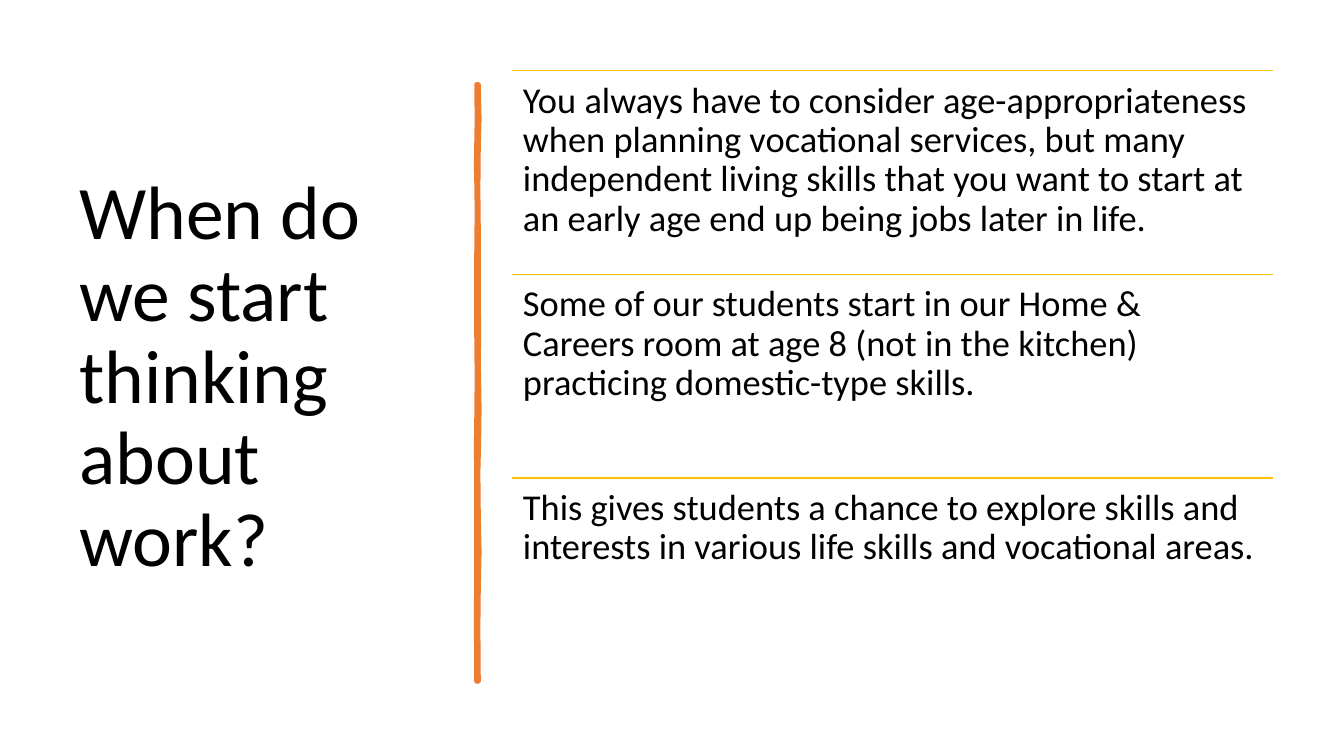
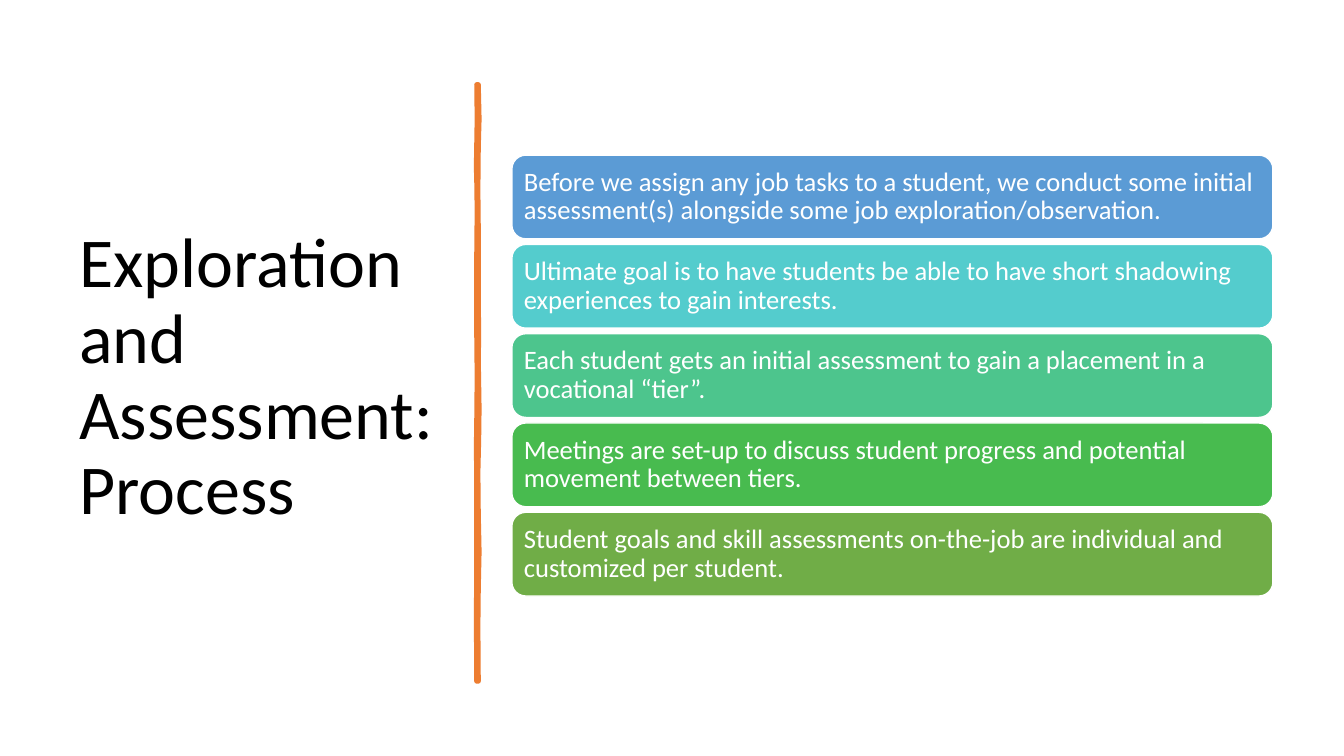
from dataclasses import dataclass

from lxml.etree import SubElement
from pptx import Presentation
from pptx.dml.color import RGBColor
from pptx.enum.shapes import MSO_CONNECTOR, MSO_SHAPE
from pptx.enum.text import MSO_ANCHOR, MSO_AUTO_SIZE, PP_ALIGN
from pptx.oxml.ns import qn
from pptx.shapes.base import BaseShape
from pptx.slide import Slide
from pptx.util import Cm, Pt

COLORS = {
    "text": "000000",
    "white": "FFFFFF",
    "divider": "ED7D31",
    "rule": "FFC000",
    "blue": "5B9BD5",
    "turquoise": "54CCCD",
    "mint": "4DC58D",
    "green": "48BB4F",
    "olive": "70AD47",
}
FONT = "Calibri"
TITLE_ONLY = 5
CONTENT_LEFT, CONTENT_WIDTH = 12.9, 19.18
CONTENT_TOP = 1.78
SECTION_HEIGHT = 5.13
BAR_TOP, BAR_HEIGHT, BAR_PITCH = 3.91, 2.11, 2.25

# Hand-drawn outline, in hundredths of a centimetre.
DIVIDER_RIGHT = [
    (1206, 213), (1208, 300), (1206, 371), (1205, 480), (1206, 574),
    (1206, 747), (1207, 850), (1206, 904), (1208, 1030), (1207, 1107),
    (1205, 1190), (1206, 1295), (1208, 1390), (1206, 1483),
    (1205, 1580), (1206, 1717),
]
DIVIDER_LEFT = [
    (1201, 1717), (1200, 1560), (1201, 1415), (1201, 1212), (1200, 1130),
    (1201, 1054), (1202, 950), (1201, 851), (1201, 635), (1202, 530),
    (1201, 460), (1200, 420), (1202, 300), (1201, 213),
]


@dataclass(frozen=True)
class Bar:
    text: str
    color: str


SECTIONS = [
    "You always have to consider age-appropriateness when planning vocational "
    "services, but many independent living skills that you want to start at an "
    "early age end up being jobs later in life.",
    "Some of our students start in our Home & Careers room at age 8 (not in the "
    "kitchen) practicing domestic-type skills.",
    "This gives students a chance to explore skills and interests in various "
    "life skills and vocational areas.",
]
BARS = [
    Bar("Before we assign any job tasks to a student, we conduct some initial "
        "assessment(s) alongside some job exploration/observation.", "blue"),
    Bar("Ultimate goal is to have students be able to have short shadowing "
        "experiences to gain interests.", "turquoise"),
    Bar("Each student gets an initial assessment to gain a placement in a "
        "vocational “tier”.", "mint"),
    Bar("Meetings are set-up to discuss student progress and potential movement "
        "between tiers.", "green"),
    Bar("Student goals and skill assessments on-the-job are individual and "
        "customized per student.", "olive"),
]


def rgb(name: str) -> RGBColor:
    return RGBColor.from_string(COLORS[name])


def write_text(shape: BaseShape, text: str, *, size: float, color: str = "text",
               anchor: MSO_ANCHOR = MSO_ANCHOR.MIDDLE, inset: float = 0.25) -> None:
    frame = shape.text_frame
    frame.word_wrap = True
    frame.auto_size = MSO_AUTO_SIZE.NONE
    frame.vertical_anchor = anchor
    frame.margin_left = frame.margin_right = Cm(inset)
    frame.margin_top = frame.margin_bottom = Cm(inset)
    paragraph = frame.paragraphs[0]
    paragraph.alignment = PP_ALIGN.LEFT
    paragraph.line_spacing = 0.9
    run = paragraph.add_run()
    run.text = text
    run.font.name = FONT
    run.font.size = Pt(size)
    run.font.color.rgb = rgb(color)


def paint(shape: BaseShape, fill: str, line: str, width: float) -> None:
    shape.shadow.inherit = False
    shape.fill.solid()
    shape.fill.fore_color.rgb = rgb(fill)
    shape.line.color.rgb = rgb(line)
    shape.line.width = Pt(width)


def add_divider(slide: Slide) -> None:
    start, *points = DIVIDER_RIGHT + DIVIDER_LEFT
    builder = slide.shapes.build_freeform(*start, scale=Cm(0.01))
    builder.add_line_segments(points, close=True)
    paint(builder.convert_to_shape(), "divider", "divider", 3.25)


def add_titled_slide(presentation: Presentation, title: str, size: float) -> Slide:
    slide = presentation.slides.add_slide(presentation.slide_layouts[TITLE_ONLY])
    shape = slide.shapes.title
    shape.left, shape.top = Cm(1.75), Cm(CONTENT_TOP)
    shape.width, shape.height = Cm(9.5), Cm(15.52)
    write_text(shape, title, size=size)
    add_divider(slide)
    return slide


def add_rule(slide: Slide, top: float) -> None:
    line = slide.shapes.add_connector(
        MSO_CONNECTOR.STRAIGHT, Cm(CONTENT_LEFT), Cm(top),
        Cm(CONTENT_LEFT + CONTENT_WIDTH), Cm(top))
    line.line.color.rgb = rgb("rule")
    line.line.width = Pt(1)
    SubElement(line._element.spPr, qn("a:effectLst"))


def add_section(slide: Slide, text: str, top: float) -> None:
    add_rule(slide, top)
    box = slide.shapes.add_textbox(
        Cm(CONTENT_LEFT), Cm(top), Cm(CONTENT_WIDTH), Cm(SECTION_HEIGHT))
    write_text(box, text, size=26, anchor=MSO_ANCHOR.TOP, inset=0.28)


def add_bar(slide: Slide, bar: Bar, top: float) -> None:
    shape = slide.shapes.add_shape(
        MSO_SHAPE.ROUNDED_RECTANGLE, Cm(CONTENT_LEFT), Cm(top),
        Cm(CONTENT_WIDTH), Cm(BAR_HEIGHT))
    paint(shape, bar.color, "white", 1)
    write_text(shape, bar.text, size=19, color="white", inset=0.2)


def main() -> None:
    presentation = Presentation()
    presentation.slide_width, presentation.slide_height = Cm(33.87), Cm(19.05)

    slide = add_titled_slide(
        presentation, "When do we start thinking about work?", 54)
    for index, text in enumerate(SECTIONS):
        add_section(slide, text, CONTENT_TOP + index * SECTION_HEIGHT)

    slide = add_titled_slide(
        presentation, "Exploration and Assessment: Process", 50)
    for index, bar in enumerate(BARS):
        add_bar(slide, bar, BAR_TOP + index * BAR_PITCH)

    presentation.save("out.pptx")


if __name__ == "__main__":
    main()
